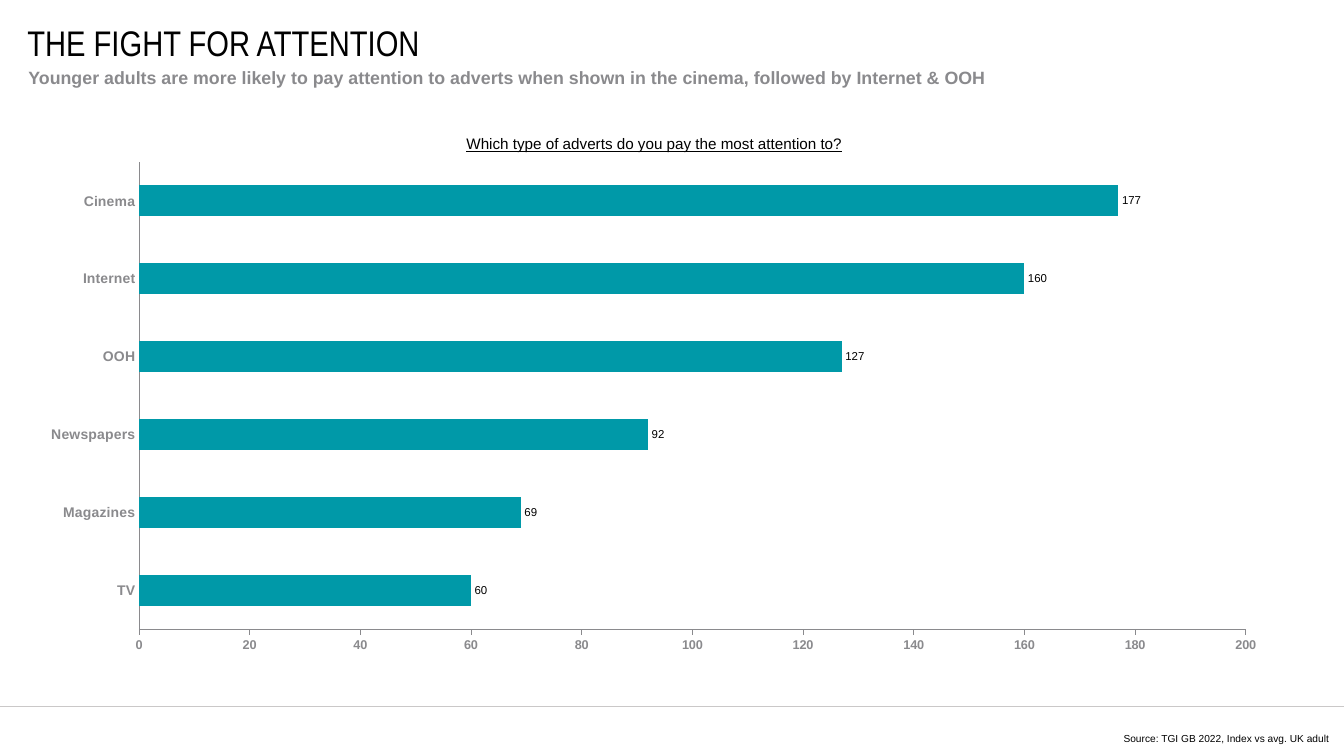
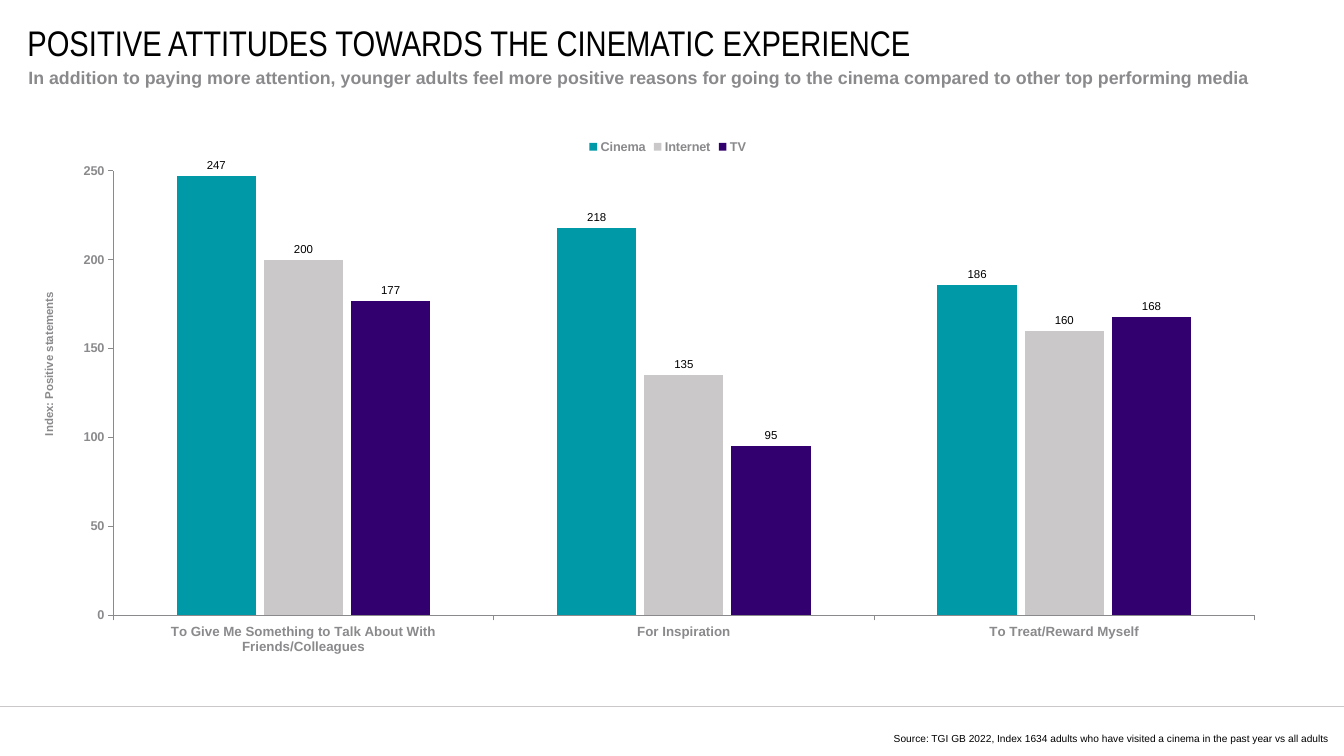
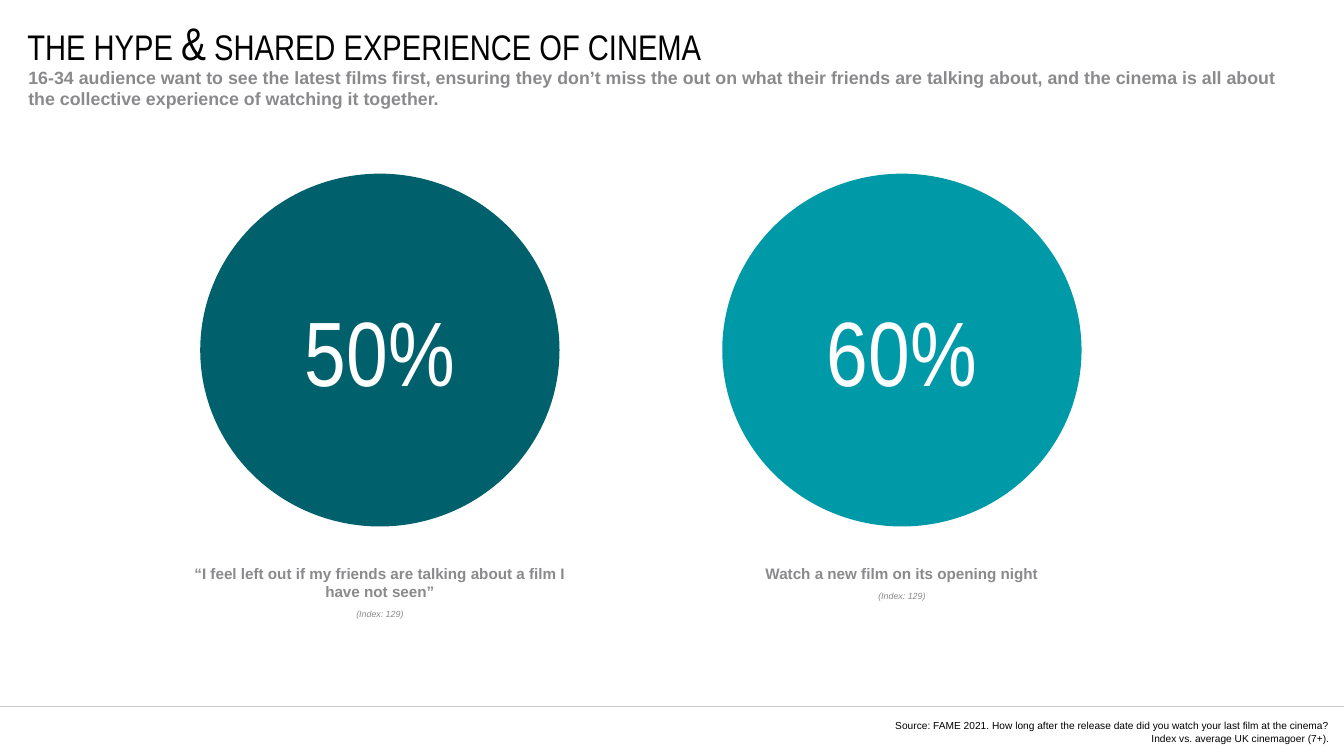
from pptx import Presentation
from pptx.chart.data import CategoryChartData
from pptx.dml.color import RGBColor
from pptx.enum.chart import XL_CHART_TYPE as ChartType
from pptx.enum.chart import XL_LABEL_POSITION as LabelPos
from pptx.enum.chart import XL_LEGEND_POSITION as LegendPos
from pptx.enum.chart import XL_TICK_MARK as Tick
from pptx.enum.shapes import MSO_CONNECTOR as Connector
from pptx.enum.shapes import MSO_SHAPE as Shape
from pptx.enum.text import MSO_ANCHOR as Anchor
from pptx.enum.text import PP_ALIGN as Align
from pptx.oxml import parse_xml
from pptx.oxml.ns import nsdecls, qn
from pptx.util import Inches, Pt

# Shared look
COLORS = {
    "black": "000000", "white": "FFFFFF", "gray": "8A8A8D", "silver": "CAC8C8",
    "teal": "0099A8", "deep_teal": "00606B", "purple": "33006F",
}
BODY, DISPLAY = "Arial", "Arial Narrow"
SLIDE_W, SLIDE_H = 14.7, 8.27

# Content: title parts are (text, size)
ATTENTION = {
    "title": [("THE FIGHT FOR ATTENTION", 28)],
    "subtitle": "Younger adults are more likely to pay attention to adverts when shown "
                "in the cinema, followed by Internet & OOH",
    "source": ["Source: TGI GB 2022, Index vs avg. UK adult"],
    "question": "Which type of adverts do you pay the most attention to?",
    "categories": ["TV", "Magazines", "Newspapers", "OOH", "Internet", "Cinema"],
    "series": [("Series 1", [60, 69, 92, 127, 160, 177], "teal")],
}
ATTITUDES = {
    "title": [("POSITIVE ATTITUDES TOWARDS THE CINEMATIC EXPERIENCE", 28)],
    "subtitle": "In addition to paying more attention, younger adults feel more positive "
                "reasons for going to the cinema compared to other top performing media",
    "source": ["Source: TGI GB 2022, Index 1634 adults who have visited a cinema "
               "in the past year vs all adults"],
    "axis": "Index: Positive statements",
    "categories": ["To Give Me Something to Talk About With Friends/Colleagues",
                   "For Inspiration", "To Treat/Reward Myself"],
    "series": [("Cinema", [247, 218, 186], "teal"),
               ("Internet", [200, 135, 160], "silver"),
               ("TV", [177, 95, 168], "purple")],
}
HYPE = {
    "title": [("THE HYPE ", 28), ("&", 36), (" SHARED EXPERIENCE OF CINEMA", 28)],
    "subtitle": "16-34 audience want to see the latest films first, ensuring they don’t "
                "miss the out on what their friends are talking about, and the cinema is "
                "all about the collective experience of watching it together.",
    "source": ["Source: FAME 2021. How long after the release date did you watch "
               "your last film at the cinema?",
               "Index vs. average UK cinemagoer (7+)."],
    "facts": [
        ("50%", "“I feel left out if my friends are talking about a film I have not seen”",
         "(Index: 129)", "deep_teal"),
        ("60%", "Watch a new film on its opening night", "(Index: 129)", "teal"),
    ],
}


def rgb(name):
    return RGBColor.from_string(COLORS[name])


def style(font, size, color, bold=False, face=BODY):
    font.name, font.size, font.bold = face, Pt(size), bold
    font.color.rgb = rgb(color)


def add_text(slide, box, anchor=Anchor.TOP, inset=0.0, wrap=True):
    frame = slide.shapes.add_textbox(*map(Inches, box)).text_frame
    frame.word_wrap, frame.vertical_anchor = wrap, anchor
    frame.margin_left = frame.margin_right = Inches(inset)
    frame.margin_top = frame.margin_bottom = Inches(inset / 2)
    return frame


def add_page(deck, content):
    """Blank slide with the shared title, subtitle, footer rule and source."""
    slide = deck.slides.add_slide(deck.slide_layouts[6])
    rule = slide.shapes.add_connector(
        Connector.STRAIGHT, 0, Inches(7.73), Inches(SLIDE_W), Inches(7.73))
    rule.line.color.rgb, rule.line.width = rgb("silver"), Pt(0.5)
    rule._element.spPr.append(parse_xml(f"<a:effectLst {nsdecls('a')}/>"))

    title = add_text(slide, (0.3, 0.3, 13.58, 0.32), Anchor.MIDDLE, wrap=False)
    for text, size in content["title"]:
        part = title.paragraphs[0].add_run()
        part.text = text
        style(part.font, size, "black", face=DISPLAY)

    subtitle = add_text(slide, (0.31, 0.73, 13.82, 0.48)).paragraphs[0]
    subtitle.text = content["subtitle"]
    style(subtitle.font, 14, "gray", bold=True)

    source = add_text(slide, (7.37, 7.88, 7.17, 0.26), Anchor.BOTTOM)
    source.text = "\n".join(content["source"])
    for line in source.paragraphs:
        line.alignment = Align.RIGHT
        style(line.font, 8, "black")
    return slide


def place(element, x, y, w=None, h=None):
    """Give a chart part a manual layout, in fractions of the chart."""
    for old in element.findall(qn("c:layout")):
        element.remove(old)
    size = ""
    if w is not None:
        size = f'<c:w val="{w}"/><c:h val="{h}"/>'
    target = '<c:layoutTarget val="inner"/>' if size else ""
    layout = parse_xml(
        f'<c:layout {nsdecls("c")}><c:manualLayout>{target}<c:xMode val="edge"/>'
        f'<c:yMode val="edge"/><c:x val="{x}"/><c:y val="{y}"/>{size}'
        "</c:manualLayout></c:layout>")
    before = [element.find(qn(tag)) for tag in ("c:tx", "c:legendPos")]
    before = [part for part in before if part is not None]
    if before:
        before[0].addnext(layout)
    else:
        element.insert(0, layout)


def add_bars(slide, kind, box, content, gap, overlap, plot_box, top, step, label_size):
    data = CategoryChartData(number_format="0")
    data.categories = content["categories"]
    for name, values, _ in content["series"]:
        data.add_series(name, values)
    chart = slide.shapes.add_chart(kind, *map(Inches, box), data).chart
    style(chart.font, 10, "black")
    chart.has_title = chart.has_legend = False
    place(chart._chartSpace.find(".//" + qn("c:plotArea")), *plot_box)

    plot = chart.plots[0]
    plot.gap_width, plot.overlap, plot.vary_by_categories = gap, overlap, False
    plot.has_data_labels = True
    labels = plot.data_labels
    labels.show_value, labels.position = True, LabelPos.OUTSIDE_END
    labels.number_format, labels.number_format_is_linked = "0", False
    style(labels.font, 9, "black")
    for series, (_, _, color) in zip(plot.series, content["series"]):
        series.format.fill.solid()
        series.format.fill.fore_color.rgb = rgb(color)

    for axis, size in ((chart.category_axis, label_size), (chart.value_axis, 10)):
        axis.has_major_gridlines = False
        axis.major_tick_mark, axis.minor_tick_mark = Tick.OUTSIDE, Tick.NONE
        axis.format.line.color.rgb, axis.format.line.width = rgb("gray"), Pt(0.75)
        style(axis.tick_labels.font, size, "gray", bold=True)
    scale = chart.value_axis
    scale.minimum_scale, scale.maximum_scale, scale.major_unit = 0, top, step
    return chart


def write_heading(heading, text, size, color, bold):
    run = heading.text_frame.paragraphs[0].add_run()
    run.text = text
    style(run.font, size, color, bold)
    return run


def build_attention(deck):
    slide = add_page(deck, ATTENTION)
    chart = add_bars(slide, ChartType.BAR_CLUSTERED, (0.3, 1.2, 13.71, 6.07), ATTENTION,
                     gap=150, overlap=-25, plot_box=(0.089, 0.094, 0.883, 0.843),
                     top=200, step=20, label_size=11)
    chart.category_axis.major_tick_mark = Tick.NONE
    chart.has_title = True
    question = write_heading(chart.chart_title, ATTENTION["question"], 12, "black", False)
    question.font.underline = True
    place(chart.chart_title._element, 0.348, 0.04)


def build_attitudes(deck):
    slide = add_page(deck, ATTITUDES)
    chart = add_bars(slide, ChartType.COLUMN_CLUSTERED, (0.39, 1.44, 13.48, 5.97), ATTITUDES,
                     gap=160, overlap=-10, plot_box=(0.063, 0.072, 0.926, 0.814),
                     top=250, step=50, label_size=10.5)
    chart.has_legend = True
    chart.legend.position, chart.legend.include_in_layout = LegendPos.BOTTOM, False
    style(chart.legend.font, 10, "gray", bold=True)
    place(chart.legend._element, 0.446, 0.008)

    heading = chart.value_axis.axis_title
    write_heading(heading, ATTITUDES["axis"], 9, "gray", True)
    turned = heading.text_frame._txBody.bodyPr
    turned.set("rot", "-5400000")
    turned.set("vert", "horz")
    place(heading._element, 0.003, 0.29)


def build_hype(deck):
    slide = add_page(deck, HYPE)
    circle_w, circle_h, caption_w = 3.93, 3.86, 4.67
    first_center, pitch = 4.155, 5.71
    for i, (share, statement, index, color) in enumerate(HYPE["facts"]):
        center = first_center + i * pitch
        circle = slide.shapes.add_shape(
            Shape.OVAL, Inches(center - circle_w / 2), Inches(1.9),
            Inches(circle_w), Inches(circle_h))
        circle.shadow.inherit = False
        circle.fill.solid()
        circle.fill.fore_color.rgb = rgb(color)
        circle.line.fill.background()
        frame = circle.text_frame
        frame.margin_left = frame.margin_right = 0
        frame.margin_top = frame.margin_bottom = 0
        frame.vertical_anchor = Anchor.MIDDLE
        figure = frame.paragraphs[0]
        figure.text, figure.alignment = share, Align.CENTER
        style(figure.font, 72, "white", face=DISPLAY)

        caption = add_text(slide, (center - caption_w / 2, 6.12, caption_w, 1.06), inset=0.1)
        caption.text = f"{statement}\n{index}"
        quote, note = caption.paragraphs
        quote.alignment = note.alignment = Align.CENTER
        style(quote.font, 12, "gray", bold=True)
        style(note.font, 7, "gray")
        note.font.italic, note.line_spacing = True, Pt(15)


def main():
    deck = Presentation()
    deck.slide_width, deck.slide_height = Inches(SLIDE_W), Inches(SLIDE_H)
    for build in (build_attention, build_attitudes, build_hype):
        build(deck)
    deck.save("out.pptx")


if __name__ == "__main__":
    main()
